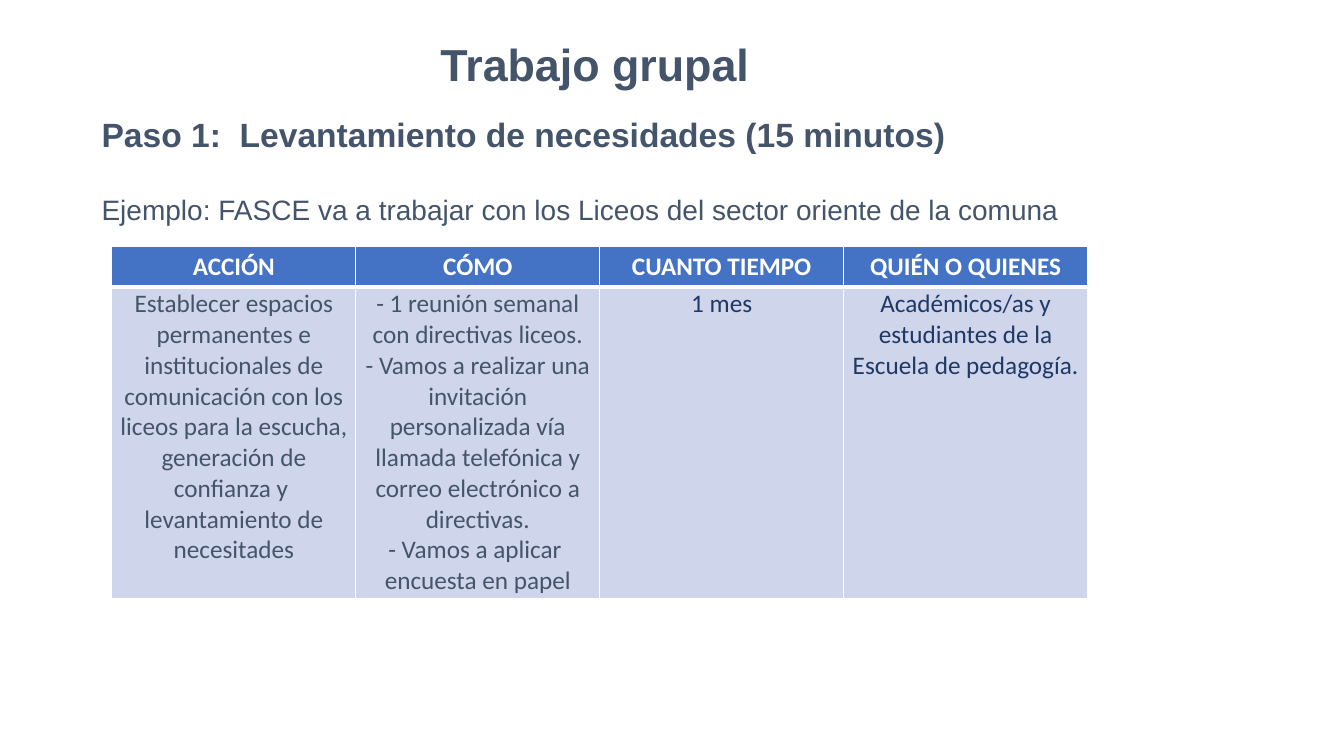
from pptx import Presentation
from pptx.dml.color import RGBColor
from pptx.enum import text as t
from pptx.oxml import parse_xml
from pptx.oxml.ns import nsdecls
from pptx.util import Cm, Pt

SLATE, NAVY, WHITE = "44546A", "203864", "FFFFFF"
BLUE, PALE = "4472C4", "CFD5EA"

HEADS = ["ACCIÓN", "CÓMO", "CUANTO TIEMPO", "QUIÉN O QUIENES"]
PLAN = [
    (["Establecer espacios permanentes e institucionales de comunicación con "
      "los liceos para la escucha, generación de confianza y  levantamiento "
      "de necesitades"], SLATE),
    (["- 1 reunión semanal con directivas liceos.",
      "- Vamos a realizar una invitación personalizada vía llamada telefónica "
      "y correo electrónico a directivas.",
      "- Vamos a aplicar  encuesta en papel"], SLATE),
    (["1 mes"], NAVY),
    (["Académicos/as y estudiantes de la Escuela de pedagogía."], NAVY),
]


def color(code):
    return RGBColor.from_string(code)


def style(par, face, size, code, bold=False):
    font = par.font
    font.name, font.size, font.bold = face, Pt(size), bold
    font.color.rgb = color(code)


def add_text(slide, box, lines, gap=0):
    """Add a text box; each line is (words, size, bold)."""
    frame = slide.shapes.add_textbox(*map(Cm, box)).text_frame
    frame.word_wrap = True
    for i, (words, size, bold) in enumerate(lines):
        par = frame.add_paragraph() if i else frame.paragraphs[0]
        par.text = words
        style(par, "Arial", size, SLATE, bold)
        if i:
            par.space_before = Pt(gap)


def add_edges(cell, top=1, base=1):
    props = cell._tc.get_or_add_tcPr()
    widths = {"lnL": 1, "lnR": 1, "lnT": top, "lnB": base}
    for i, (tag, width) in enumerate(widths.items()):
        props.insert(i, parse_xml(
            f'<a:{tag} {nsdecls("a")} w="{Pt(width)}"><a:solidFill>'
            f'<a:srgbClr val="{WHITE}"/></a:solidFill></a:{tag}>'))


def fill_cell(cell, lines, code, back, bold=False):
    cell.fill.solid()
    cell.fill.fore_color.rgb = color(back)
    cell.text = "\n".join(lines)
    for par in cell.text_frame.paragraphs:
        par.alignment = t.PP_ALIGN.CENTER
        style(par, "Calibri", 18, code, bold)


def add_plan(slide, box):
    grid = slide.shapes.add_table(2, len(HEADS), *map(Cm, box)).table
    grid.rows[0].height = Cm(1.03)
    grid.rows[1].height = Cm(box[3] - 1.03)
    for col, (head, (lines, code)) in enumerate(zip(HEADS, PLAN)):
        top, body = grid.cell(0, col), grid.cell(1, col)
        fill_cell(top, [head], WHITE, BLUE, True)
        add_edges(top, base=3)
        fill_cell(body, lines, code, PALE)
        add_edges(body, top=3)
        body.margin_top = body.margin_bottom = Cm(0.05)
        body.margin_left = body.margin_right = Cm(0.19)


def main():
    deck = Presentation()
    deck.slide_width, deck.slide_height = Cm(33.87), Cm(19.05)
    slide = deck.slides.add_slide(deck.slide_layouts[6])

    # Title
    add_text(slide, (10.85, 0.81, 9.07, 1.63), [("Trabajo grupal", 32, True)])

    # Step and example
    add_text(slide, (2.31, 2.74, 25.55, 3.18), [
        ("Paso 1:  Levantamiento de necesidades (15 minutos)", 24, True),
        ("Ejemplo: FASCE va a trabajar con los Liceos del sector oriente "
         "de la comuna", 20, False)], gap=27.6)

    # Action plan
    add_plan(slide, (2.82, 6.2, 24.59, 8.89))
    deck.save("out.pptx")


if __name__ == "__main__":
    main()
